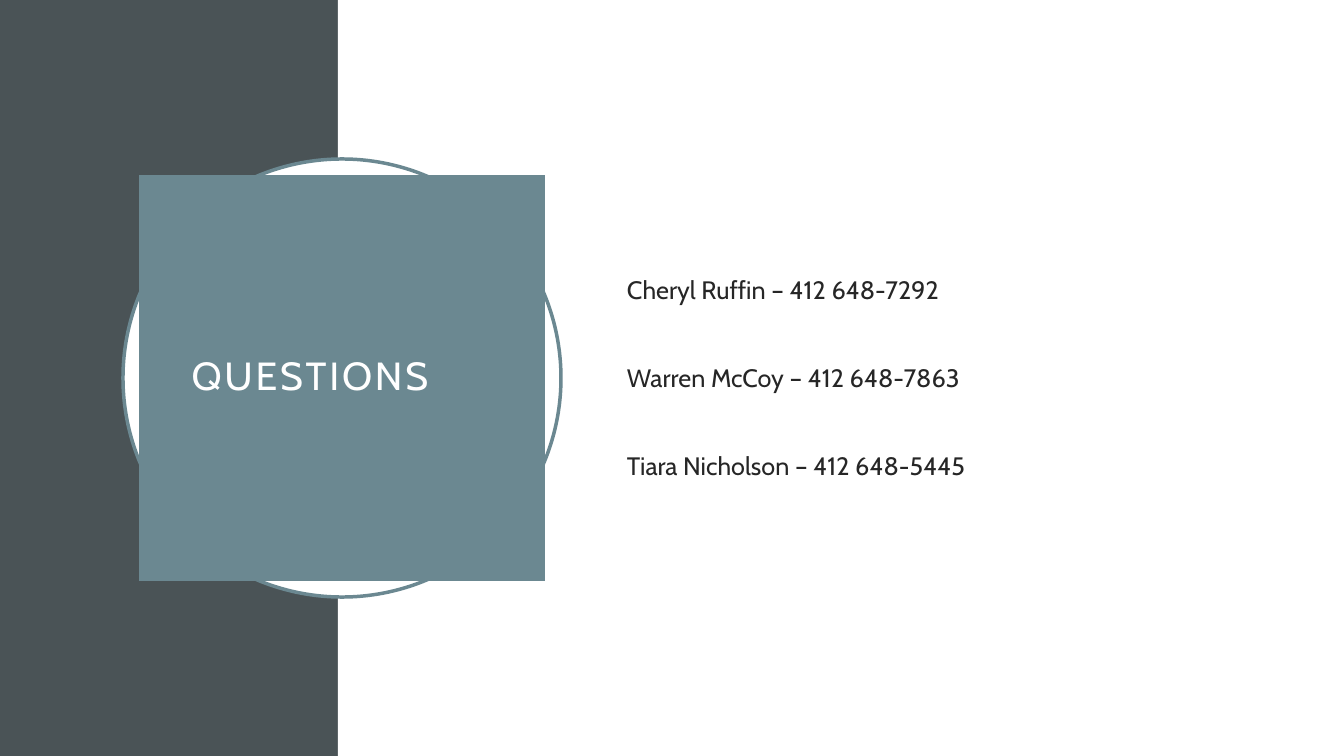
import pptx
import pptx.dml.color
import pptx.enum.shapes
import pptx.enum.text
import pptx.util

EMU_PER_PX = 914400 / 100.8
SLIDE_WIDTH, SLIDE_HEIGHT = 1344, 756
FONT = "Cabin"
COLORS = {"slate": "4A5356", "teal": "6B8891", "white": "FFFFFF", "ink": "262626"}
SHAPES = pptx.enum.shapes.MSO_SHAPE
ALIGN = pptx.enum.text.PP_ALIGN
CONTACTS = [
    "Cheryl Ruffin – 412 648-7292",
    "Warren McCoy – 412 648-7863",
    "Tiara Nicholson – 412 648-5445",
]


def px(length):
    return pptx.util.Emu(round(length * EMU_PER_PX))


def rgb(name):
    return pptx.dml.color.RGBColor.from_string(COLORS[name])


def apply(target, values):
    for name, value in values.items():
        setattr(target, name, value)


def add_block(slide, preset, box, fill, outline=None):
    block = slide.shapes.add_shape(preset, *map(px, box))
    block.shadow.inherit = False
    block.fill.solid()
    block.fill.fore_color.rgb = rgb(fill)
    if outline:
        block.line.color.rgb = rgb(outline)
        block.line.width = pptx.util.Pt(2.5)
    else:
        block.line.fill.background()
    return block


def set_frame(frame, left, top, right, bottom):
    apply(frame, {
        "word_wrap": True,
        "vertical_anchor": pptx.enum.text.MSO_ANCHOR.MIDDLE,
        "margin_left": px(left),
        "margin_top": px(top),
        "margin_right": px(right),
        "margin_bottom": px(bottom),
    })


def write(paragraph, text, size, color, layout):
    apply(paragraph, layout)
    run = paragraph.add_run()
    run.text = text
    apply(run.font, {"name": FONT, "size": pptx.util.Pt(size)})
    run.font.color.rgb = rgb(color)
    return run


def add_background(slide, box, split):
    left, top, width, height = box
    add_block(slide, SHAPES.RECTANGLE, (left, top, split, height), "slate")
    add_block(slide, SHAPES.RECTANGLE, (left + split, top, width - split, height), "white")


def add_title(slide, box):
    left, top, width, height = box
    rim = 16
    add_block(slide, SHAPES.OVAL, box, "white", "teal")
    square = (left + rim, top + rim, width - 2 * rim, height - 2 * rim)
    title = add_block(slide, SHAPES.RECTANGLE, square, "teal").text_frame
    set_frame(title, 20, 20, 84, 20)
    heading = write(title.paragraphs[0], "QUESTIONS", 28, "white",
                    {"alignment": ALIGN.CENTER, "line_spacing": 0.9})
    heading.font._element.set("spc", "200")


def add_contacts(slide, box):
    contacts = slide.shapes.add_textbox(*map(px, box)).text_frame
    set_frame(contacts, 10, 5, 10, 5)
    for index, contact in enumerate(CONTACTS):
        paragraph = contacts.add_paragraph() if index else contacts.paragraphs[0]
        gap = pptx.util.Pt(41.5 if index else 0)
        write(paragraph, contact, 18, "ink",
              {"alignment": ALIGN.LEFT, "space_before": gap})


def main():
    deck = pptx.Presentation()
    apply(deck, {"slide_width": px(SLIDE_WIDTH), "slide_height": px(SLIDE_HEIGHT)})
    slide = deck.slides.add_slide(deck.slide_layouts[6])
    add_background(slide, (0, 0, SLIDE_WIDTH, SLIDE_HEIGHT), 338)
    add_title(slide, (123, 159, 438, 438))
    add_contacts(slide, (617, 154, 587, 447))
    deck.save("out.pptx")


if __name__ == "__main__":
    main()
